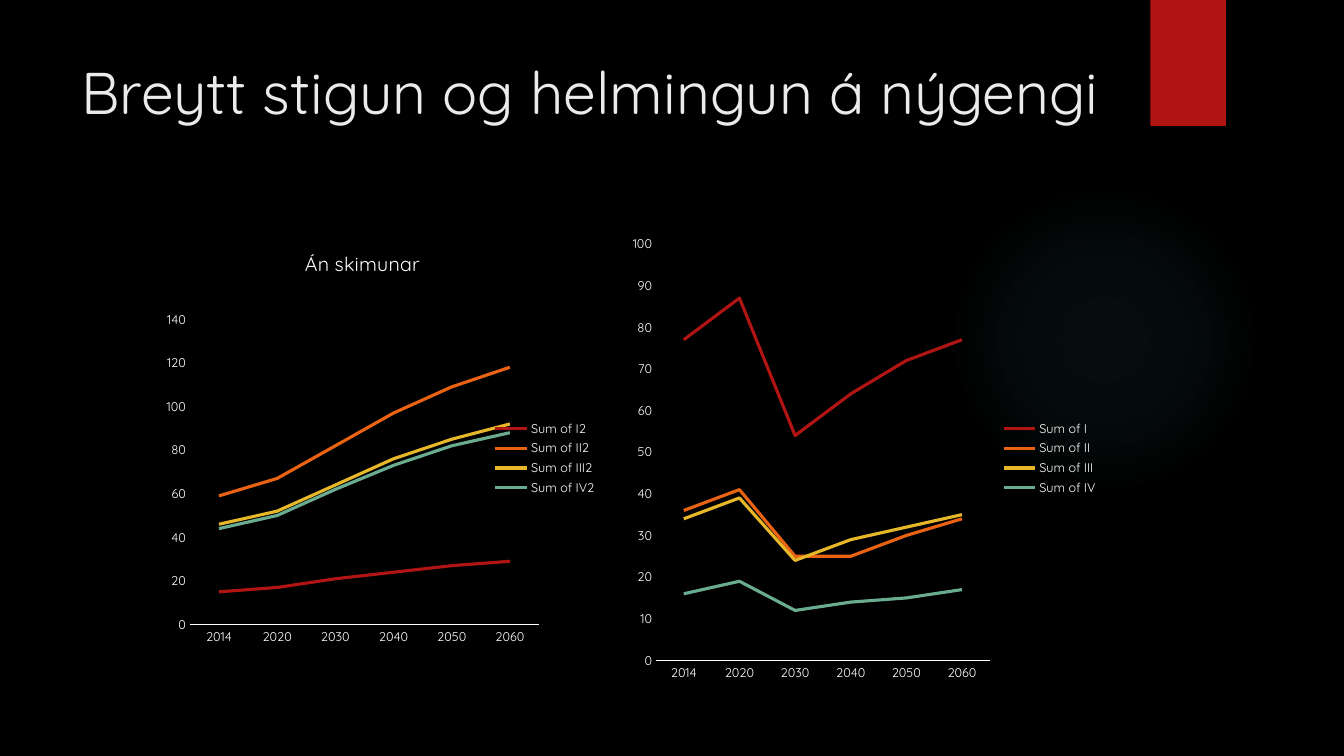
"""Build a dark slide with two line charts of stage counts by year."""
from dataclasses import dataclass

import lxml.etree
import pptx
import pptx.chart.chart
import pptx.chart.data
import pptx.dml.color
import pptx.enum.chart
import pptx.enum.shapes
import pptx.enum.text
import pptx.oxml
import pptx.oxml.ns
import pptx.slide
import pptx.util

RGBColor = pptx.dml.color.RGBColor
BLACK = RGBColor(0x00, 0x00, 0x00)
WHITE = RGBColor(0xFF, 0xFF, 0xFF)
PALE = RGBColor(0xEB, 0xEB, 0xEB)
RED = RGBColor(0xB0, 0x15, 0x13)
ORANGE = RGBColor(0xEA, 0x63, 0x12)
YELLOW = RGBColor(0xE6, 0xB7, 0x29)
GREEN = RGBColor(0x6A, 0xAC, 0x90)
TEAL = RGBColor(0x50, 0xB9, 0xC1)

FONT = "Quicksand"
COLUMNS, ROWS = 133.3, 75
CELL = pptx.util.Inches(0.1)
YEARS = ("2014", "2020", "2030", "2040", "2050", "2060")
STAGE_COLORS = (RED, ORANGE, YELLOW, GREEN)
GLOW_STOPS = ((0, 7), (36, 6), (69, 0))


@dataclass(frozen=True)
class Area:
    """Position and size in grid columns and rows."""
    column: float
    row: float
    columns: float
    rows: float

    def lengths(self) -> tuple[int, ...]:
        """Return left, top, width and height as lengths."""
        return tuple(
            round(cells * CELL)
            for cells in (self.column, self.row, self.columns, self.rows)
        )


@dataclass(frozen=True)
class StageChart:
    """One line chart: its column, stage values and optional heading."""
    column: float
    stages: dict[str, tuple[int, ...]]
    title: str = ""
    plot: tuple[float, ...] = ()


CHARTS = (
    StageChart(61.8, {
        "Sum of I": (77, 87, 54, 64, 72, 77),
        "Sum of II": (36, 41, 25, 25, 30, 34),
        "Sum of III": (34, 39, 24, 29, 32, 35),
        "Sum of IV": (16, 19, 12, 14, 15, 17),
    }),
    StageChart(12.1, {
        "Sum of I2": (15, 17, 21, 24, 27, 29),
        "Sum of II2": (59, 67, 82, 97, 109, 118),
        "Sum of III2": (46, 52, 64, 76, 85, 92),
        "Sum of IV2": (44, 50, 62, 73, 82, 88),
    }, "Án skimunar", (0.14, 0.2, 0.72, 0.66)),
)


def style_font(font, size: float, color: RGBColor) -> None:
    """Apply the slide's typeface with a size and colour."""
    formats = {"name": FONT, "size": pptx.util.Pt(size), "bold": False}
    for name, value in formats.items():
        setattr(font, name, value)
    font.color.rgb = color


def add_preset(page: pptx.slide.Slide, kind, area: Area, color: RGBColor):
    """Add a plain filled shape without line or shadow."""
    shape = page.shapes.add_shape(kind, *area.lengths())
    shape.shadow.inherit = False
    shape.fill.solid()
    shape.fill.fore_color.rgb = color
    shape.line.fill.background()
    return shape


def add_glow(page: pptx.slide.Slide, area: Area) -> None:
    """Add a faint round glow that fades outwards."""
    glow = add_preset(page, pptx.enum.shapes.MSO_SHAPE.OVAL, area, TEAL)
    stops = "".join(
        f'<a:gs pos="{place * 1000}"><a:srgbClr val="{TEAL}">'
        f'<a:alpha val="{alpha * 1000}"/></a:srgbClr></a:gs>'
        for place, alpha in GLOW_STOPS
    )
    gradient = pptx.oxml.parse_xml(
        f'<a:gradFill {pptx.oxml.ns.nsdecls("a")}><a:gsLst>{stops}</a:gsLst>'
        '<a:path path="circle"><a:fillToRect l="50000" t="50000" '
        'r="50000" b="50000"/></a:path></a:gradFill>'
    )
    properties = glow.element.spPr
    solid = properties.find(pptx.oxml.ns.qn("a:solidFill"))
    properties.replace(solid, gradient)


def add_heading(page: pptx.slide.Slide, area: Area, text: str) -> None:
    """Add the slide heading."""
    box = page.shapes.add_textbox(*area.lengths())
    formats = {
        "word_wrap": True,
        "vertical_anchor": pptx.enum.text.MSO_ANCHOR.TOP,
    }
    for name, value in formats.items():
        setattr(box.text_frame, name, value)
    span = box.text_frame.paragraphs[0].add_run()
    span.text = text
    style_font(span.font, 42, PALE)


def set_layout(parent, before: str, **values) -> None:
    """Place a chart part by hand, ahead of the named sibling."""
    for old in parent.findall(pptx.oxml.ns.qn("c:layout")):
        parent.remove(old)
    entries = "".join(
        f'<c:{name} val="{value}"/>' for name, value in values.items()
    )
    layout = pptx.oxml.parse_xml(
        f'<c:layout {pptx.oxml.ns.nsdecls("c")}><c:manualLayout>{entries}'
        '</c:manualLayout></c:layout>'
    )
    parent.find(pptx.oxml.ns.qn(before)).addprevious(layout)


def style_axes(chart: pptx.chart.chart.Chart) -> None:
    """Remove ticks and gridlines and keep only the category line."""
    formats = {
        "major_tick_mark": pptx.enum.chart.XL_TICK_MARK.NONE,
        "minor_tick_mark": pptx.enum.chart.XL_TICK_MARK.NONE,
        "has_major_gridlines": False,
    }
    for axis in (chart.category_axis, chart.value_axis):
        for name, value in formats.items():
            setattr(axis, name, value)
        style_font(axis.tick_labels.font, 9, WHITE)
    chart.category_axis.format.line.color.rgb = WHITE
    chart.category_axis.format.line.width = pptx.util.Pt(0.75)
    chart.value_axis.format.line.fill.background()


def add_stage_chart(page: pptx.slide.Slide, item: StageChart) -> None:
    """Add one line chart with a legend on its right."""
    data = pptx.chart.data.CategoryChartData()
    data.categories = YEARS
    for name, values in item.stages.items():
        data.add_series(name, values)
    area = Area(item.column, 22.5, 48.1, 45.9)
    chart = page.shapes.add_chart(
        pptx.enum.chart.XL_CHART_TYPE.LINE, *area.lengths(), data
    ).chart
    style_font(chart.font, 10, WHITE)
    style_axes(chart)
    chart.plots[0].vary_by_categories = False
    for series, color in zip(chart.plots[0].series, STAGE_COLORS):
        series.smooth = False
        series.format.line.color.rgb = color
        series.format.line.width = pptx.util.Pt(2.25)
    chart.has_legend = True
    chart.legend.position = pptx.enum.chart.XL_LEGEND_POSITION.RIGHT
    chart.legend.include_in_layout = False
    style_font(chart.legend.font, 9, WHITE)
    chart.has_title = bool(item.title)
    if item.title:
        span = chart.chart_title.text_frame.paragraphs[0].add_run()
        span.text = item.title
        style_font(span.font, 14, WHITE)
        title = chart.element.chart.find(pptx.oxml.ns.qn("c:title"))
        set_layout(title, "c:overlay", xMode="edge", yMode="edge", x=0.37, y=0.04)
        left, top, width, height = item.plot
        set_layout(chart.element.chart.plotArea, "c:lineChart",
                   layoutTarget="inner", xMode="edge", yMode="edge",
                   x=left, y=top, w=width, h=height)


def main() -> None:
    """Build and save the deck."""
    deck = pptx.Presentation()
    deck.slide_width = round(COLUMNS * CELL)
    deck.slide_height = ROWS * CELL
    page = deck.slides.add_slide(deck.slide_layouts[6])
    page.background.fill.solid()
    page.background.fill.fore_color.rgb = BLACK
    add_glow(page, Area(94.1, 18.3, 30.8, 30.8))
    add_preset(page, pptx.enum.shapes.MSO_SHAPE.RECTANGLE,
               Area(114.1, 0, 7.5, 12.5), RED)
    add_heading(page, Area(7.1, 5, 102.9, 15.3),
                "Breytt stigun og helmingun á nýgengi")
    for item in CHARTS:
        add_stage_chart(page, item)
    deck.save("out.pptx")


if __name__ == "__main__":
    main()
